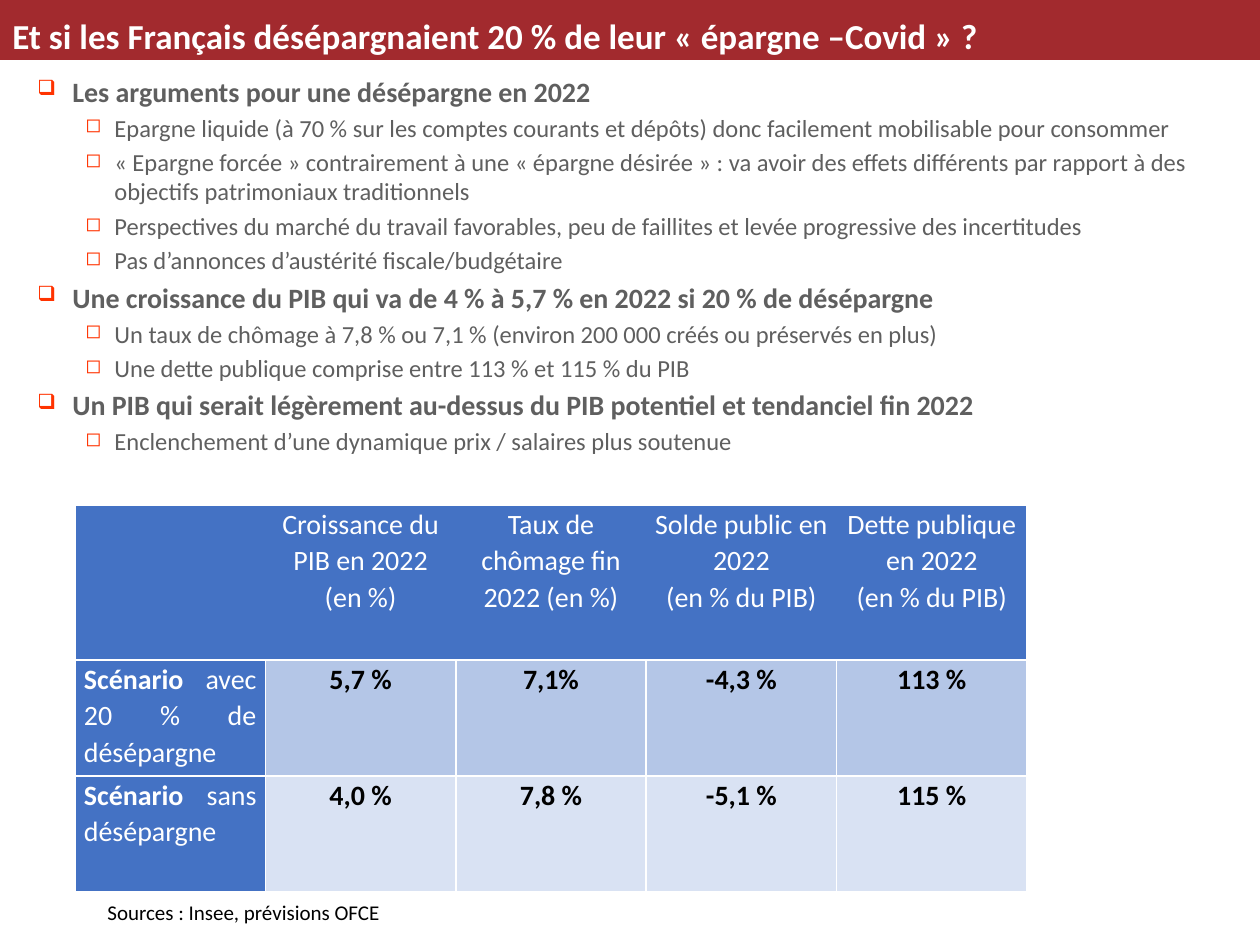
from lxml.etree import SubElement
from pptx import Presentation
from pptx.dml.color import RGBColor
from pptx.enum.shapes import MSO_SHAPE as Shape
from pptx.enum.text import MSO_ANCHOR as Anchor, MSO_AUTO_SIZE as AutoSize, PP_ALIGN as Align
from pptx.oxml.ns import qn
from pptx.util import Emu, Pt

COLORS = {
    "banner": "A22A2E", "white": "FFFFFF", "black": "000000", "grey": "5F5F5F",
    "bullet": "FF3300", "header": "4472C4", "band_dark": "B4C6E7", "band_light": "D9E2F3",
}
FONT = "Calibri"

TITLE = "Et si les Français désépargnaient 20 % de leur « épargne –Covid » ?"
ARGUMENTS = [
    ("Les arguments pour une désépargne en 2022", [
        "Epargne liquide (à 70 % sur les comptes courants et dépôts) donc facilement mobilisable pour consommer",
        "« Epargne forcée » contrairement à une « épargne désirée » : va avoir des effets différents "
        "par rapport à des objectifs patrimoniaux traditionnels",
        "Perspectives du marché du travail favorables, peu de faillites et levée progressive des incertitudes",
        "Pas d’annonces d’austérité fiscale/budgétaire",
    ]),
    ("Une croissance du PIB qui va de 4 % à 5,7 % en 2022 si 20 % de désépargne", [
        "Un taux de chômage à 7,8 % ou 7,1 % (environ 200 000 créés ou préservés en plus)",
        "Une dette publique comprise entre 113 % et 115 % du PIB",
    ]),
    ("Un PIB qui serait légèrement au-dessus du PIB potentiel et tendanciel fin 2022", [
        "Enclenchement d’une dynamique prix / salaires plus soutenue",
    ]),
]
HEADINGS = [
    ["Croissance du PIB en 2022 (en %)"],
    ["Taux de chômage fin 2022 (en %)"],
    ["Solde public en 2022", "(en % du PIB)"],
    ["Dette publique en 2022", "(en % du PIB)"],
]
SCENARIOS = [
    ("avec 20 % de désépargne", "band_dark", ["5,7 %", "7,1%", "-4,3 %", "113 %"]),
    ("sans désépargne", "band_light", ["4,0 %", "7,8 %", "-5,1 %", "115 %"]),
]
SOURCE = "Sources : Insee, prévisions OFCE"

# Level: text size, bold, text indent, bullet hang, bullet sign, bullet size in %
LEVELS = [(16, True, 35, 35, "❑", 75), (14, False, 77, 29, "◻", 80)]


def px(value):
    return Emu(round(value * 914400 / 126))


def rgb(name):
    return RGBColor.from_string(COLORS[name])


def add_text(para, text, size=16, color="black", bold=False, align=None, spacing=None):
    span = para.add_run()
    span.text = text
    span.font.name = FONT
    span.font.size = Pt(size)
    span.font.bold = bold
    span.font.color.rgb = rgb(color)
    if align is not None:
        para.alignment = align
    if spacing:
        para.line_spacing = spacing


def next_para(frame, is_first):
    return frame.paragraphs[0] if is_first else frame.add_paragraph()


def set_bullet(para, indent, hang, sign, percent):
    props = para._p.get_or_add_pPr()
    props.set("marL", str(px(indent)))
    props.set("indent", str(-px(hang)))
    color = SubElement(props, qn("a:buClr"))
    SubElement(color, qn("a:srgbClr"), val=COLORS["bullet"])
    SubElement(props, qn("a:buSzPct"), val=str(percent * 1000))
    SubElement(props, qn("a:buChar"), char=sign)


def set_borders(cell, hidden=()):
    """White 1 pt edges, except the hidden sides."""
    props = cell._tc.get_or_add_tcPr()
    for side in "LRTB":
        line = SubElement(props, qn(f"a:ln{side}"), w=str(Pt(1)))
        if side in hidden:
            SubElement(line, qn("a:noFill"))
        else:
            fill = SubElement(line, qn("a:solidFill"))
            SubElement(fill, qn("a:srgbClr"), val=COLORS["white"])


def style_cell(cell, fill, hidden=()):
    cell.margin_left = cell.margin_right = px(9)
    cell.margin_top = cell.margin_bottom = 0
    set_borders(cell, hidden)
    cell.fill.solid()
    cell.fill.fore_color.rgb = rgb(fill)


def add_banner(page, left, top, width, height):
    bar = page.shapes.add_shape(Shape.RECTANGLE, px(left), px(top), px(width), px(height))
    bar.shadow.inherit = False
    bar.fill.solid()
    bar.fill.fore_color.rgb = rgb("banner")
    bar.line.fill.background()
    box = page.shapes.add_textbox(px(left), px(top + 3), px(width - 87), px(height + 5))
    frame = box.text_frame
    frame.word_wrap = True
    frame.vertical_anchor = Anchor.MIDDLE
    add_text(frame.paragraphs[0], TITLE, size=20, color="white", bold=True)


def add_arguments(page, left, top, width, height):
    frame = page.shapes.add_textbox(px(left), px(top), px(width), px(height)).text_frame
    frame.word_wrap = True
    lines = [(level, text) for heading, points in ARGUMENTS
             for level, text in [(0, heading)] + [(1, point) for point in points]]
    for index, (level, text) in enumerate(lines):
        size, bold, *bullet = LEVELS[level]
        para = next_para(frame, index == 0)
        para.level = level
        if index:
            para.space_before = Pt(size * 0.2)
        set_bullet(para, *bullet)
        add_text(para, text, size=size, color="grey", bold=bold)


def add_scenarios(page, left, top, width, row_heights):
    count = len(HEADINGS) + 1
    frame = page.shapes.add_table(len(row_heights), count, px(left), px(top),
                                  px(width), px(sum(row_heights)))
    table = frame.table
    for column in table.columns:
        column.width = px(width / count)
    for row, height in zip(table.rows, row_heights):
        row.height = px(height)

    # Header row, without lines between its cells
    style_cell(table.cell(0, 0), "header", hidden="R")
    for col, texts in enumerate(HEADINGS, 1):
        cell = table.cell(0, col)
        style_cell(cell, "header", hidden="L" if col == count - 1 else "LR")
        for index, text in enumerate(texts):
            add_text(next_para(cell.text_frame, index == 0), text,
                     color="white", align=Align.CENTER, spacing=1.07)

    # One row per scenario
    for row, (label, band, values) in enumerate(SCENARIOS, 1):
        cell = table.cell(row, 0)
        style_cell(cell, "header")
        para = cell.text_frame.paragraphs[0]
        add_text(para, "Scénario ", color="white", bold=True, align=Align.JUSTIFY, spacing=1.07)
        add_text(para, label, color="white")
        for col, value in enumerate(values, 1):
            cell = table.cell(row, col)
            style_cell(cell, band)
            add_text(cell.text_frame.paragraphs[0], value, bold=True,
                     align=Align.CENTER, spacing=1.07)


def add_source(page, left, top, width, height):
    frame = page.shapes.add_textbox(px(left), px(top), px(width), px(height)).text_frame
    frame.word_wrap = False
    frame.auto_size = AutoSize.SHAPE_TO_FIT_TEXT
    add_text(frame.paragraphs[0], SOURCE, size=12)


def main():
    deck = Presentation()
    deck.slide_width, deck.slide_height = px(1260), px(945)
    page = deck.slides.add_slide(deck.slide_layouts[6])
    add_banner(page, 0, 0, 1260, 60)
    add_arguments(page, 25, 68, 1201, 824)
    add_scenarios(page, 75, 505, 952, [155, 116, 116])
    add_source(page, 95, 893, 306, 38)
    deck.save("out.pptx")


if __name__ == "__main__":
    main()
